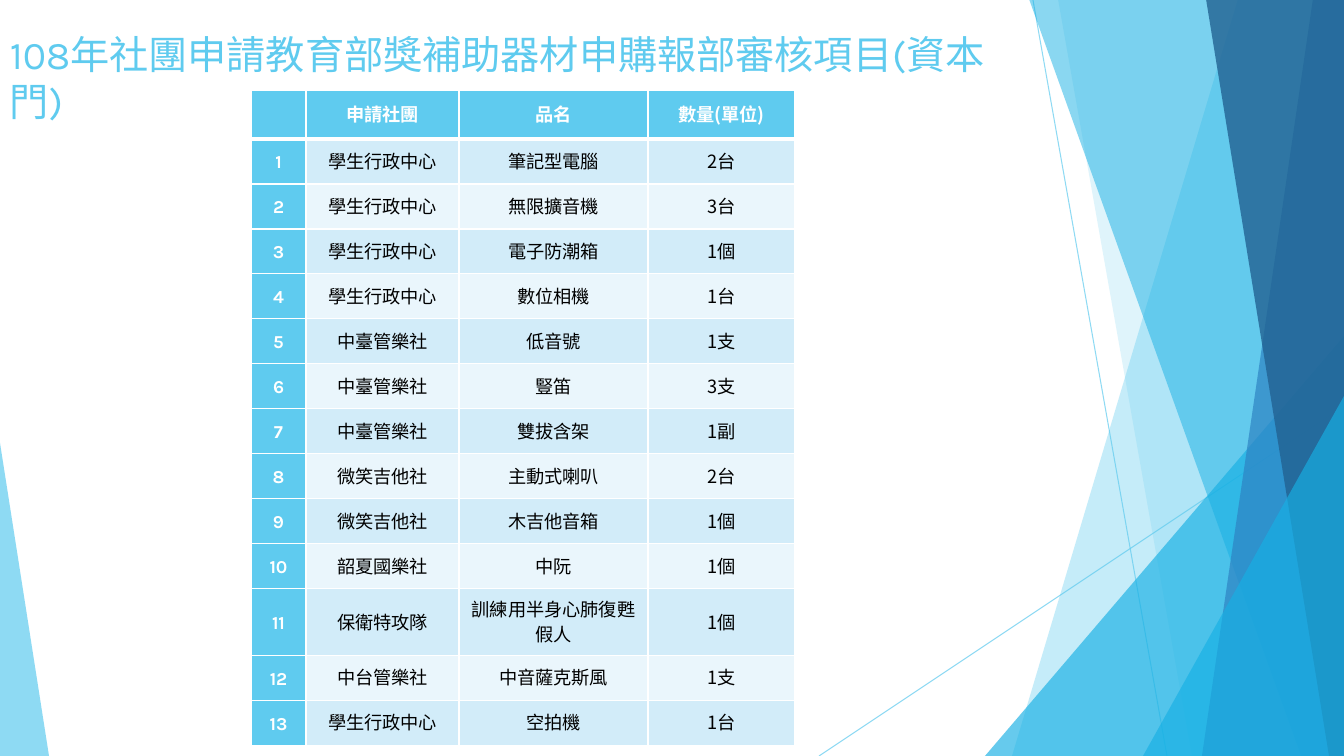
"""Build the slide listing club equipment purchases sent for ministry review."""
import lxml.etree
import pptx
import pptx.dml.color
import pptx.enum.shapes
import pptx.enum.text
import pptx.oxml.ns
import pptx.util

PX = 9071
W, H = 1344, 756
COLORS = {
    "sky": "5FCBEF", "cyan": "17B0E4", "blue": "2E83C3", "navy": "226292",
    "band": "D2ECF9", "pale": "EAF6FC", "white": "FFFFFF", "black": "000000",
}
LATIN, CJK = "Karla", "Noto Sans CJK SC"
qn = pptx.oxml.ns.qn
MIDDLE = pptx.enum.text.MSO_ANCHOR.MIDDLE


def write(tf, text, font, size, color, bold=False, align=None, leading=None, after=None):
    p = tf.paragraphs[0]
    p.alignment = align
    if leading:
        p.line_spacing = pptx.util.Pt(leading)
    if after:
        p.space_after = pptx.util.Pt(after)
    r = p.add_run()
    r.text = text
    r.font.name = font
    r.font.size = pptx.util.Pt(size)
    r.font.bold = bold
    r.font.color.rgb = pptx.dml.color.RGBColor.from_string(COLORS[color])
    lxml.etree.SubElement(r._r.get_or_add_rPr(), qn("a:ea"), typeface=font)


def paint(sp, fill, color, opacity):
    fill.solid()
    fill.fore_color.rgb = pptx.dml.color.RGBColor.from_string(COLORS[color])
    clr = next(sp.element.iter(qn("a:srgbClr")))
    lxml.etree.SubElement(clr, qn("a:alpha"), val=str(opacity * 1000))


prs = pptx.Presentation()
prs.slide_width, prs.slide_height = W * PX, H * PX
s = prs.slides.add_slide(prs.slide_layouts[6])

for ends in [(1033, 0, 1167, H), (W, 406, 819, H)]:
    line = s.shapes.add_connector(
        pptx.enum.shapes.MSO_CONNECTOR.STRAIGHT, *[v * PX for v in ends])
    line.line.width = pptx.util.Pt(0.75)
    paint(line, line.line.fill, "sky", 70)
    lxml.etree.SubElement(line.element.spPr, qn("a:effectLst"))

facets = [
    ("sky", 36, (1238, 1012)),
    ("sky", 20, (1058, 1192)),
    ("cyan", 66, (985, 336, 359, 420, 1)),
    ("cyan", 50, (1029, 1301)),
    ("blue", 70, (1313, 1202)),
    ("navy", 80, (1206, 1329)),
    ("cyan", 66, (1143, 396, 201, 360, 1)),
    ("sky", 70, (0, 443, 49, 313, 0)),
]
for color, opacity, geometry in facets:
    if len(geometry) == 2:
        top_x, bottom_x = geometry
        outline = s.shapes.build_freeform(top_x, -1, scale=PX)
        outline.add_line_segments([(W, -1), (W, H), (bottom_x, H)], close=True)
        sp = outline.convert_to_shape()
    else:
        *box, apex = geometry
        sp = s.shapes.add_shape(
            pptx.enum.shapes.MSO_SHAPE.ISOSCELES_TRIANGLE, *[v * PX for v in box])
        sp.adjustments[0] = apex
    paint(sp, sp.fill, color, opacity)
    sp.line.fill.background()
    sp.shadow.inherit = False

title = s.shapes.add_textbox(0, 23 * PX, 1045 * PX, 109 * PX)
title.text_frame.word_wrap = True
title.text_frame.vertical_anchor = MIDDLE
write(title.text_frame, "108年社團申請教育部獎補助器材申購報部審核項目(資本門)",
      font=LATIN, size=28, color="sky")

items = [
    ("學生行政中心", "筆記型電腦", "2台"),
    ("學生行政中心", "無限擴音機", "3台"),
    ("學生行政中心", "電子防潮箱", "1個"),
    ("學生行政中心", "數位相機", "1台"),
    ("中臺管樂社", "低音號", "1支"),
    ("中臺管樂社", "豎笛", "3支"),
    ("中臺管樂社", "雙拔含架", "1副"),
    ("微笑吉他社", "主動式喇叭", "2台"),
    ("微笑吉他社", "木吉他音箱", "1個"),
    ("韶夏國樂社", "中阮", "1個"),
    ("保衛特攻隊", "訓練用半身心肺復甦假人", "1個"),
    ("中台管樂社", "中音薩克斯風", "1支"),
    ("學生行政中心", "空拍機", "1台"),
]
rows = [("", "申請社團", "品名", "數量(單位)")]
rows += [(str(n), *item) for n, item in enumerate(items, 1)]
col_widths = [55, 153, 189, 147]
row_heights = [49] + [45] * 10 + [67] + [45] * 2

table = s.shapes.add_table(
    len(rows), len(col_widths), 251 * PX, 90 * PX,
    sum(col_widths) * PX, sum(row_heights) * PX).table
table.first_row = table.horz_banding = False
for col, width in zip(table.columns, col_widths):
    col.width = width * PX

for i, (row, height) in enumerate(zip(rows, row_heights)):
    table.rows[i].height = height * PX
    for j, text in enumerate(row):
        cell = table.cell(i, j)
        cell.vertical_anchor = MIDDLE
        cell.margin_left = cell.margin_right = 8 * PX
        cell.margin_top = cell.margin_bottom = 0
        tcPr = cell._tc.get_or_add_tcPr()
        for side in "LRTB":
            thick = (i, side) in [(0, "B"), (1, "T")]
            ln = lxml.etree.SubElement(
                tcPr, qn("a:ln" + side), w=str(pptx.util.Pt(3 if thick else 1)))
            solid = lxml.etree.SubElement(ln, qn("a:solidFill"))
            lxml.etree.SubElement(solid, qn("a:srgbClr"), val=COLORS["white"])
        heading = i == 0 or j == 0
        fill = "sky" if heading else "band" if i % 2 else "pale"
        cell.fill.solid()
        cell.fill.fore_color.rgb = pptx.dml.color.RGBColor.from_string(COLORS[fill])
        if text:
            write(cell.text_frame, text, font=CJK if j else LATIN, size=13,
                  color="white" if heading else "black", bold=heading,
                  align=pptx.enum.text.PP_ALIGN.CENTER, leading=17.2, after=4.5)

prs.save("out.pptx")
